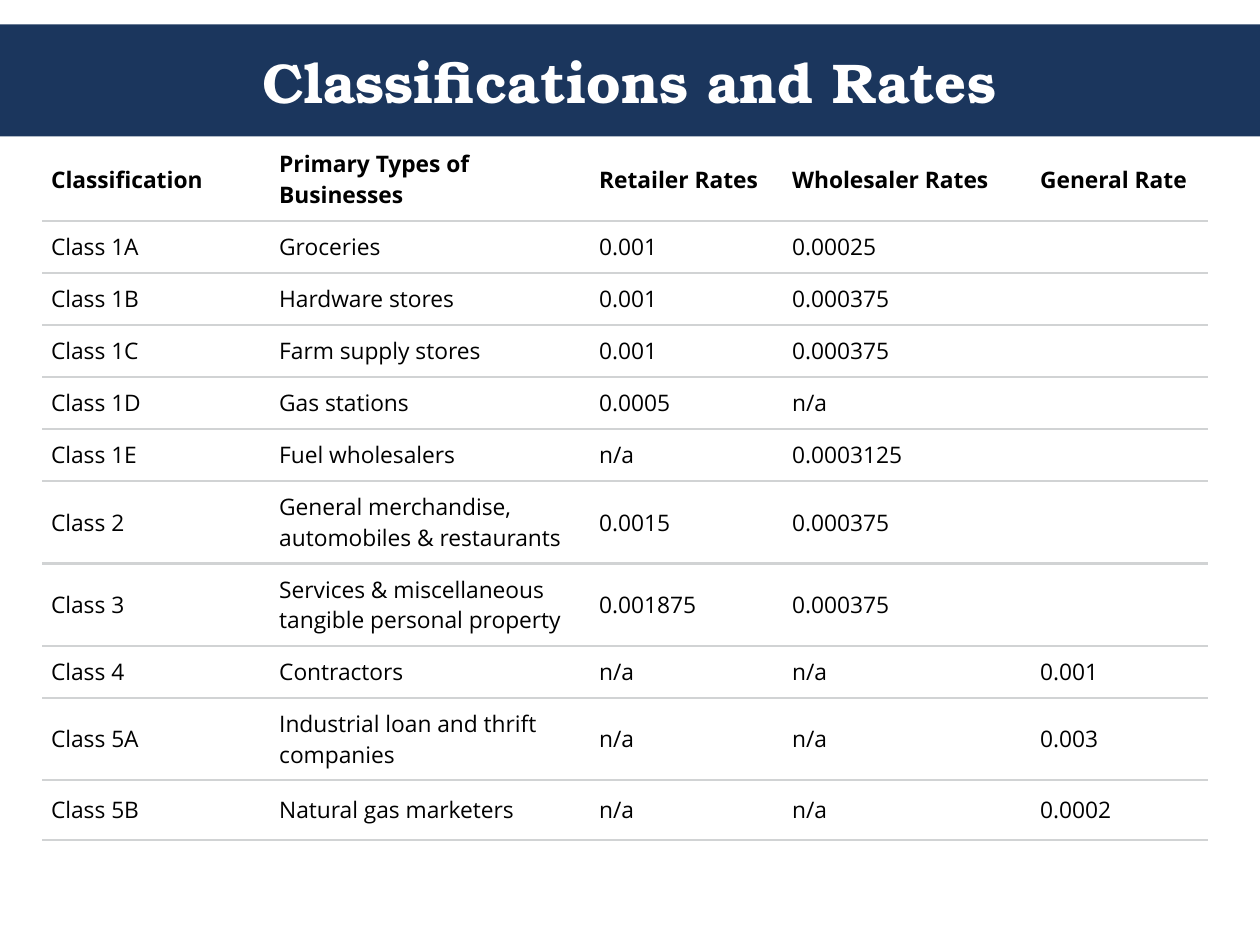
from lxml.etree import SubElement
from pptx import Presentation
from pptx.dml.color import RGBColor
from pptx.enum.shapes import MSO_SHAPE
from pptx.enum.text import MSO_ANCHOR, PP_ALIGN
from pptx.oxml.ns import qn
from pptx.util import Cm, Pt

COLORS = {"navy": "1B365D", "white": "FFFFFF", "black": "000000", "rule": "D1D3D4"}
BODY_SIZE = 13


def write(frame, text, font="Open Sans", size=BODY_SIZE, color="black", bold=False, align=PP_ALIGN.LEFT):
    paragraph = frame.paragraphs[0]
    paragraph.alignment = align
    run = paragraph.add_run()
    run.text = text
    run.font.name = font
    run.font.size = Pt(size)
    run.font.bold = bold
    run.font.color.rgb = RGBColor.from_string(COLORS[color])


def draw_border(cell, side, color=None):
    line = SubElement(cell._tc.get_or_add_tcPr(), qn(f"a:{side}"), w=str(Pt(1.5)))
    if color:
        fill = SubElement(line, qn("a:solidFill"))
        SubElement(fill, qn("a:srgbClr"), val=COLORS[color])
    else:
        SubElement(line, qn("a:noFill"))


presentation = Presentation()
presentation.slide_width = Cm(25.4)
presentation.slide_height = Cm(19.05)
slide = presentation.slides.add_slide(presentation.slide_layouts[6])

banner = slide.shapes.add_shape(MSO_SHAPE.RECTANGLE, Cm(0), Cm(0.49), Cm(25.4), Cm(2.26))
banner.shadow.inherit = False
banner.fill.solid()
banner.fill.fore_color.rgb = RGBColor.from_string(COLORS["navy"])
banner.line.fill.background()

title = slide.shapes.add_textbox(Cm(0.42), Cm(0.49), Cm(24.56), Cm(2.28)).text_frame
title.word_wrap = True
title.vertical_anchor = MSO_ANCHOR.MIDDLE
write(title, "Classifications and Rates", font="TeX Gyre Bonum", size=32,
      color="white", bold=True, align=PP_ALIGN.CENTER)

rates = [
    ("Classification", "Primary Types of Businesses", "Retailer Rates", "Wholesaler Rates", "General Rate"),
    ("Class 1A", "Groceries", "0.001", "0.00025", ""),
    ("Class 1B", "Hardware stores", "0.001", "0.000375", ""),
    ("Class 1C", "Farm supply stores", "0.001", "0.000375", ""),
    ("Class 1D", "Gas stations", "0.0005", "n/a", ""),
    ("Class 1E", "Fuel wholesalers", "n/a", "0.0003125", ""),
    ("Class 2", "General merchandise, automobiles & restaurants", "0.0015", "0.000375", ""),
    ("Class 3", "Services & miscellaneous tangible personal property", "0.001875", "0.000375", ""),
    ("Class 4", "Contractors", "n/a", "n/a", "0.001"),
    ("Class 5A", "Industrial loan and thrift companies", "n/a", "n/a", "0.003"),
    ("Class 5B", "Natural gas marketers", "n/a", "n/a", "0.0002"),
]
column_widths = [4.6, 6.45, 3.89, 5, 3.56]
one_line, two_lines, last_row = 1.05, 1.66, 1.2
row_heights = [two_lines if len(business) > 25 else one_line for _, business, *_ in rates]
row_heights[-1] = last_row

rate_table = slide.shapes.add_table(
    len(rates), len(column_widths), Cm(0.85), Cm(2.79),
    Cm(sum(column_widths)), Cm(sum(row_heights))).table
rate_table.first_row = False
rate_table.horz_banding = False
for column, width in zip(rate_table.columns, column_widths):
    column.width = Cm(width)
for row, height in zip(rate_table.rows, row_heights):
    row.height = Cm(height)

for row_index, entries in enumerate(rates):
    is_header = row_index == 0
    for column_index, entry in enumerate(entries):
        cell = rate_table.cell(row_index, column_index)
        cell.margin_left = cell.margin_right = Cm(0.18)
        cell.margin_top = cell.margin_bottom = Cm(0.18)
        cell.vertical_anchor = MSO_ANCHOR.MIDDLE
        draw_border(cell, "lnL")
        draw_border(cell, "lnR")
        draw_border(cell, "lnT", None if is_header else "rule")
        draw_border(cell, "lnB", "rule")
        cell.fill.background()
        if entry:
            write(cell.text_frame, entry, bold=is_header)
        else:
            SubElement(cell.text_frame.paragraphs[0]._p, qn("a:endParaRPr"), sz=str(BODY_SIZE * 100))

presentation.save("out.pptx")
